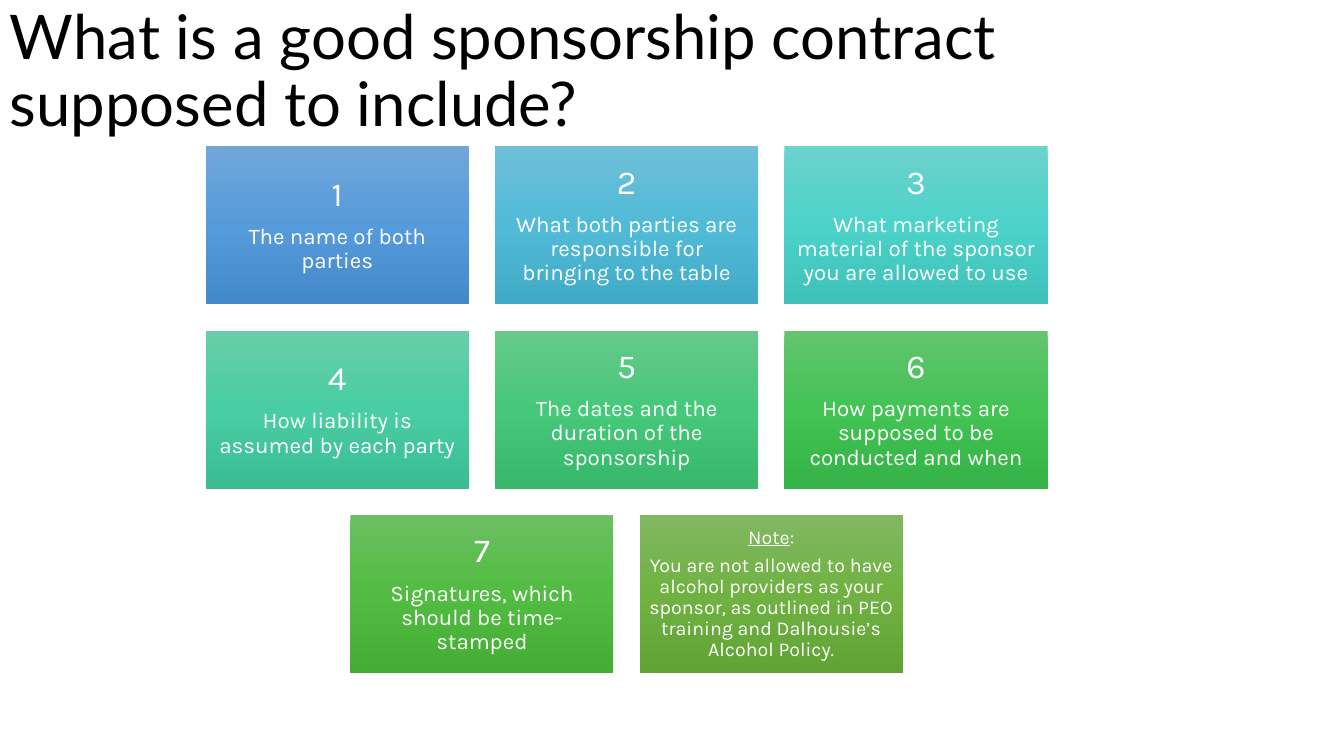
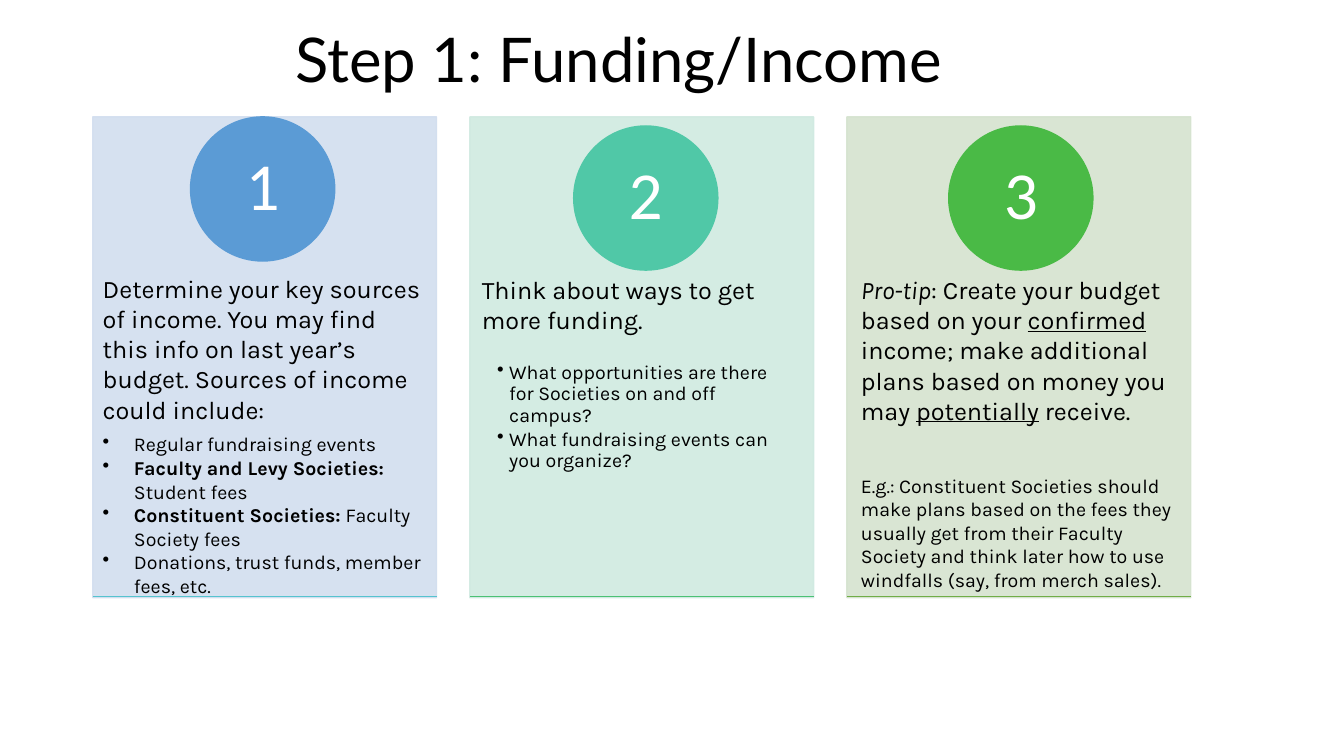
from copy import deepcopy

from lxml.etree import SubElement
from pptx import Presentation
from pptx.dml.color import RGBColor
from pptx.enum.shapes import MSO_CONNECTOR as CONNECTOR, MSO_SHAPE as SHAPE
from pptx.enum.text import MSO_ANCHOR as ANCHOR, PP_ALIGN as ALIGN
from pptx.oxml.ns import qn
from pptx.util import Inches, Pt

THEME = {
    "title_font": "Lato", "body_font": "Karla", "number_font": "Calibri",
    "title": 44, "circle": 48, "number": 24, "lead": 18, "card": 16, "detail": 14,
    "text": "000000", "inverse": "FFFFFF", "line_width": 1, "panel_opacity": 90,
    "cards": [
        ("71A6DB", "559BDB", "448ACA"), ("6EBFD7", "51BBD7", "41AAC6"),
        ("6BD2CC", "4DD2CA", "3DC1B9"), ("68CEAA", "49CDA2", "3ABD92"),
        ("66C98A", "46C87A", "37B86B"), ("64C46F", "43C354", "35B346"),
        ("6CBF62", "51BC41", "45AC35"), ("81B861", "6FB242", "62A336"),
    ],
    "panels": [
        ("D2DEEF", "5B9BD5", "55C3CF"), ("D0EAE1", "50C8A7", "4BC174"),
        ("D5E3CF", "4ABA46", "70AD47"),
    ],
}


def write(shape, paragraphs, font="body_font", color="text", align=ALIGN.LEFT,
          anchor=ANCHOR.TOP, margins=(0.1, 0.05), line=1.0, after=0, indent=0):
    frame = shape.text_frame
    frame.word_wrap = True
    frame.vertical_anchor = anchor
    frame.margin_left = frame.margin_right = Inches(margins[0])
    frame.margin_top = frame.margin_bottom = Inches(margins[1])
    for index, (size, *runs) in enumerate(paragraphs):
        paragraph = frame.add_paragraph() if index else frame.paragraphs[0]
        if indent:
            properties = paragraph._p.get_or_add_pPr()
            properties.set("marL", str(Inches(indent)))
            properties.set("indent", str(-Inches(indent)))
            SubElement(properties, qn("a:buChar")).set("char", "•")
        paragraph.alignment = align
        paragraph.line_spacing = line
        if index < len(paragraphs) - 1:
            paragraph.space_after = Pt(round(THEME[size] * after, 1))
        for content in runs:
            text, style = (content, None) if isinstance(content, str) else content
            run = paragraph.add_run()
            run.text = text
            run.font.name = THEME[font]
            run.font.size = Pt(THEME[size])
            run.font.color.rgb = RGBColor.from_string(THEME[color])
            if style:
                setattr(run.font, style, True)


def add_solid(slide, kind, left, top, width, height, color):
    shape = slide.shapes.add_shape(kind, Inches(left), Inches(top), Inches(width), Inches(height))
    shape.shadow.inherit = False
    shape.fill.solid()
    shape.fill.fore_color.rgb = RGBColor.from_string(color)
    shape.line.color.rgb = RGBColor.from_string(color)
    shape.line.width = Pt(THEME["line_width"])
    return shape


presentation = Presentation()
presentation.slide_width = Inches(13.33)
presentation.slide_height = Inches(7.5)

titles = [
    ("What is a good sponsorship contract supposed to include?", 0, 10.9, 1.45),
    ("Step 1: Funding/Income", 2.83, 10.5, 1.25),
]
slides = []
for text, left, width, height in titles:
    slide = presentation.slides.add_slide(presentation.slide_layouts[6])
    title = slide.shapes.add_textbox(Inches(left), 0, Inches(width), Inches(height))
    write(title, [("title", text)], font="title_font", anchor=ANCHOR.MIDDLE, line=0.9)
    slides.append(slide)
contract_slide, funding_slide = slides

terms = [
    "The name of both parties",
    "What both parties are responsible for bringing to the table",
    "What marketing material of the sponsor you are allowed to use",
    "How liability is assumed by each party",
    "The dates and the duration of the sponsorship",
    "How payments are supposed to be conducted and when",
    "Signatures, which should be time-stamped",
]
cards = [([("number", str(number)), ("card", term)], 0.1) for number, term in enumerate(terms, 1)]
cards.append(([
    ("detail", ("Note", "underline"), ":"),
    ("detail", "You are not allowed to have alcohol providers as your sponsor, as outlined in "
               "PEO training and Dalhousie’s Alcohol Policy."),
], 0.06))

for index, ((paragraphs, margin), colors) in enumerate(zip(cards, THEME["cards"])):
    row, column = divmod(index, 3)
    if row == 2:
        column += 0.5
    card = add_solid(contract_slide, SHAPE.RECTANGLE, 2.04 + 2.87 * column, 1.45 + 1.83 * row,
                     2.61, 1.57, colors[1])
    card.line.fill.background()
    card.fill.gradient()
    card.fill.gradient_angle = 270
    stop_list = card._element.spPr.find(".//" + qn("a:gsLst"))
    stop_list.insert(1, deepcopy(stop_list[0]))
    for stop, position, color in zip(card.fill.gradient_stops, (0, 0.5, 1), colors):
        stop.position = position
        stop.color.rgb = RGBColor.from_string(color)
    write(card, paragraphs, color="inverse", align=ALIGN.CENTER, anchor=ANCHOR.MIDDLE,
          margins=(margin, margin), line=0.9, after=0.35)

panel_left, panel_top, panel_width, panel_height, panel_step = 0.92, 1.16, 3.41, 4.77, 3.74
circle_places = [(1.89, 1.16), (5.69, 1.25), (9.41, 1.25)]
for index, (colors, circle_place) in enumerate(zip(THEME["panels"], circle_places)):
    panel_color, circle_color, rule_color = colors
    left = panel_left + panel_step * index
    panel = add_solid(funding_slide, SHAPE.RECTANGLE, left, panel_top, panel_width, panel_height,
                      panel_color)
    for color in panel._element.spPr.iter(qn("a:srgbClr")):
        SubElement(color, qn("a:alpha")).set("val", str(THEME["panel_opacity"] * 1000))
    circle = add_solid(funding_slide, SHAPE.OVAL, *circle_place, 1.43, 1.43, circle_color)
    write(circle, [("circle", str(index + 1))], font="number_font", color="inverse",
          align=ALIGN.CENTER, anchor=ANCHOR.MIDDLE, margins=(0.11, 0.01), line=0.9)
    rule = funding_slide.shapes.add_connector(
        CONNECTOR.STRAIGHT, Inches(left), Inches(5.92), Inches(left + panel_width), Inches(5.92))
    rule.line.color.rgb = RGBColor.from_string(rule_color)
    rule.line.width = Pt(THEME["line_width"])
    SubElement(rule._element.spPr, qn("a:effectLst"))

bodies = [
    (0.92, 2.66, 3.38, 1.92, [
        ("lead", "Determine your key sources of income. You may find this info on last year’s "
                 "budget. Sources of income could include:"),
    ], {}),
    (0.92, 4.24, 3.38, 1.75, [
        ("detail", "Regular fundraising events"),
        ("detail", ("Faculty and Levy Societies:", "bold"), " Student fees"),
        ("detail", ("Constituent Societies:", "bold"), " Faculty Society fees"),
        ("detail", "Donations, trust funds, member fees, etc."),
    ], {"indent": 0.31}),
    (4.68, 2.67, 3.38, 1.01, [("lead", "Think about ways to get more funding.")], {}),
    (4.66, 3.6, 3.41, 1.3, [
        ("detail", "What opportunities are there for Societies on and off campus?"),
        ("detail", "What fundraising events can you organize?"),
    ], {"indent": 0.12, "margins": (0.27, 0), "line": 0.9, "after": 0.15}),
    (8.44, 2.67, 3.38, 1.92, [
        ("lead", ("Pro-tip", "italic"), ": Create your budget based on your ",
         ("confirmed", "underline"), " income; make additional plans based on money you may ",
         ("potentially", "underline"), " receive."),
    ], {}),
    (8.44, 4.65, 3.38, 1.28, [
        ("detail", "E.g.: Constituent Societies should make plans based on the fees they usually "
                   "get from their Faculty Society and think later how to use windfalls (say, "
                   "from merch sales)."),
    ], {}),
]
for left, top, width, height, paragraphs, options in bodies:
    body = funding_slide.shapes.add_textbox(Inches(left), Inches(top), Inches(width), Inches(height))
    write(body, paragraphs, **options)

presentation.save("out.pptx")
